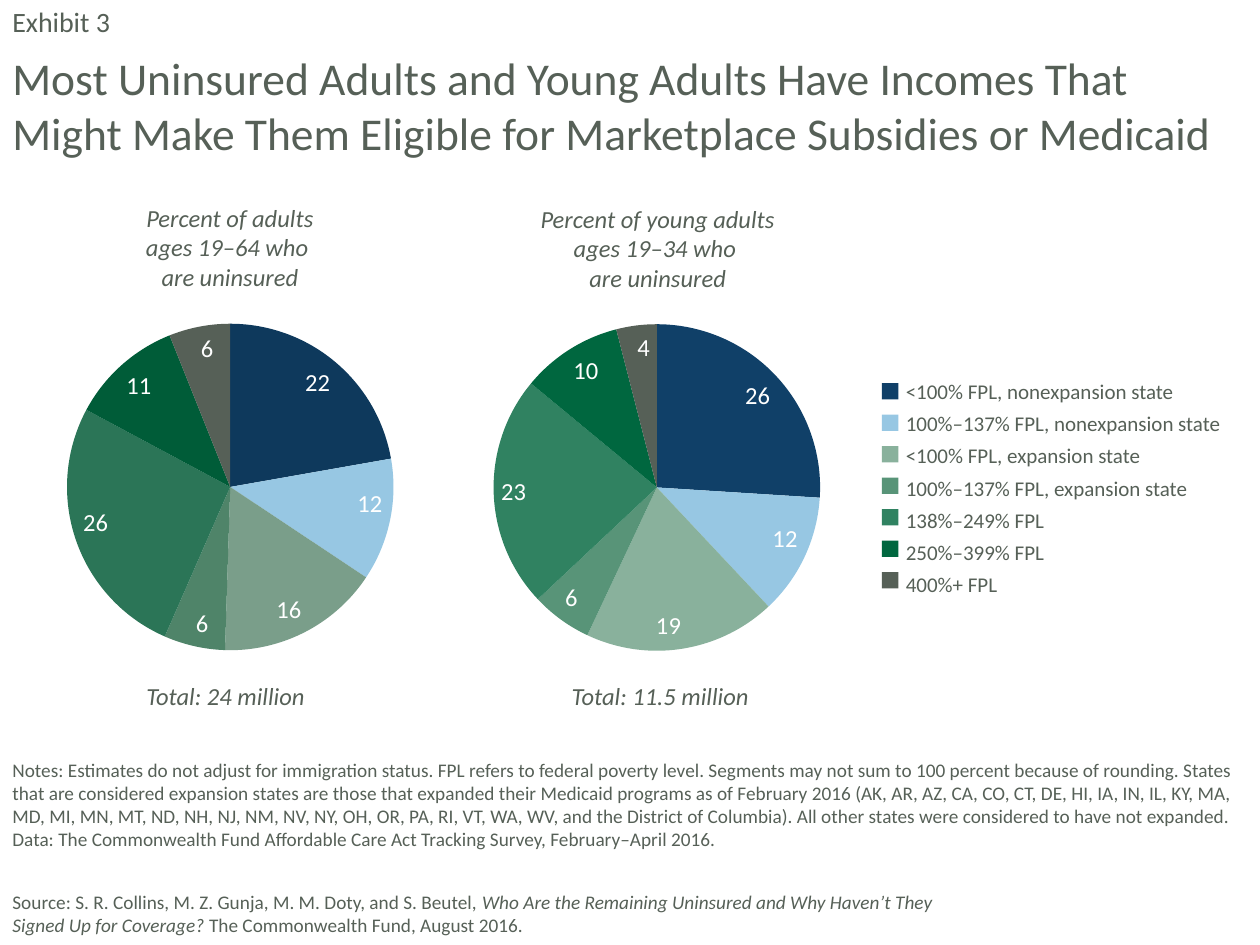
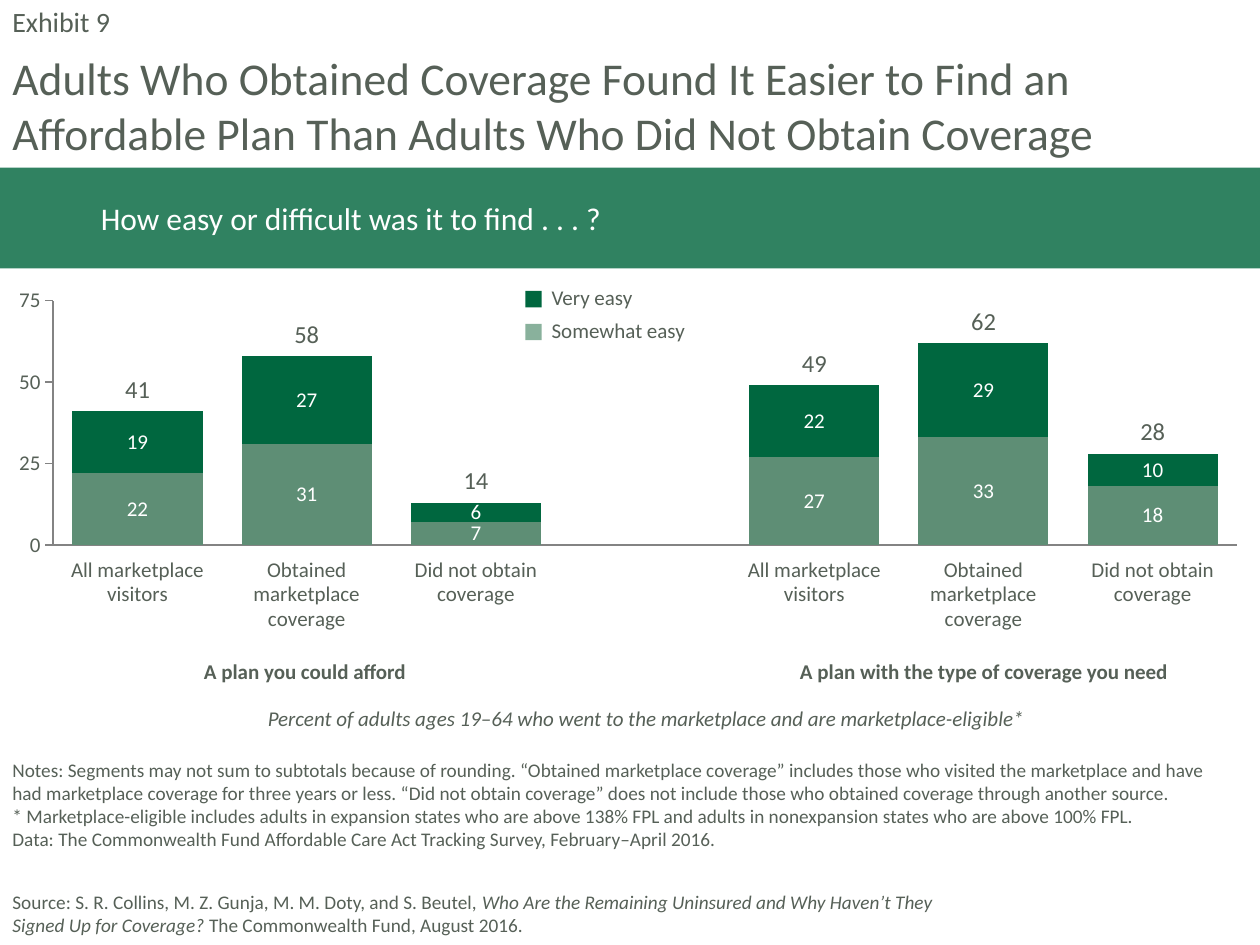
import pptx
import pptx.util
import pptx.chart.data
import pptx.dml.color
import pptx.enum.chart
import pptx.enum.shapes
import pptx.enum.text
import pptx.oxml
from lxml import etree

Inches = pptx.util.Inches
Pt = pptx.util.Pt
XL = pptx.enum.chart
ALIGN = pptx.enum.text.PP_ALIGN
ANCHOR = pptx.enum.text.MSO_ANCHOR

FONT = "Calibri"
COLORS = {
    "text": "566057", "white": "FFFFFF", "axis": "838383",
    "navy": "104068", "sky": "97C7E3", "sage": "89B19C", "fern": "589478",
    "green": "308261", "forest": "00673F", "moss": "5E8E75",
    "deep_navy": "0E395C", "deep_sage": "7A9E8A", "deep_fern": "4F8469",
    "deep_green": "2B7557", "deep_forest": "005C38",
}
INCOME_GROUPS = [
    ("<100% FPL, nonexpansion state", "navy"),
    ("100%–137% FPL, nonexpansion state", "sky"),
    ("<100% FPL, expansion state", "sage"),
    ("100%–137% FPL, expansion state", "fern"),
    ("138%–249% FPL", "green"),
    ("250%–399% FPL", "forest"),
    ("400%+ FPL", "text"),
]
ADULT_COLORS = ["deep_navy", "sky", "deep_sage", "deep_fern", "deep_green",
                "deep_forest", "text"]
YOUNG_COLORS = [color for _, color in INCOME_GROUPS]
SOURCE = [
    ("Source: S. R. Collins, M. Z. Gunja, M. M. Doty, and S. Beutel, ", False),
    ("Who Are the Remaining Uninsured and Why Haven’t They Signed Up for Coverage?", True),
    (" The Commonwealth Fund, August 2016.", False),
]
DATA = "Data: The Commonwealth Fund Affordable Care Act Tracking Survey, February–April 2016."
VISITORS = ["All marketplace visitors", "Obtained marketplace coverage",
            "Did not obtain coverage"]


def rgb(name):
    return pptx.dml.color.RGBColor.from_string(COLORS[name])


def set_font(font, size, color="text", bold=False, italic=False):
    font.name = FONT
    font.size = Pt(size)
    font.bold = bold
    font.italic = italic
    font.color.rgb = rgb(color)


def write(tf, text, size=12, color="text", bold=False, italic=False,
          align=ALIGN.LEFT, anchor=ANCHOR.TOP, spacing=None):
    tf.word_wrap = True
    tf.vertical_anchor = anchor
    paragraphs = text if isinstance(text, list) else [text]
    for i, content in enumerate(paragraphs):
        p = tf.paragraphs[0] if i == 0 else tf.add_paragraph()
        p.alignment = align
        if spacing:
            p.line_spacing = Pt(spacing)
        runs = content if isinstance(content, list) else [(content, italic)]
        for run_text, run_italic in runs:
            for j, line in enumerate(run_text.split("\n")):
                if j:
                    p.add_line_break()
                r = p.add_run()
                r.text = line
                set_font(r.font, size, color, bold, run_italic)


def add_text(s, x, y, w, h, text, **fmt):
    tf = s.shapes.add_textbox(Inches(x), Inches(y), Inches(w), Inches(h)).text_frame
    write(tf, text, **fmt)
    return tf


def add_rect(s, x, y, w, h, color):
    sp = s.shapes.add_shape(pptx.enum.shapes.MSO_SHAPE.RECTANGLE,
                            Inches(x), Inches(y), Inches(w), Inches(h))
    sp.shadow.inherit = False
    sp.fill.solid()
    sp.fill.fore_color.rgb = rgb(color)
    sp.line.fill.background()
    return sp


def add_swatch(s, x, y, color):
    add_rect(s, x, y, 0.13, 0.13, color)


def add_frame(prs, exhibit, title, notes):
    s = prs.slides.add_slide(prs.slide_layouts[6])
    tf = add_text(s, 0, 0.04, 10, 0.33, exhibit, size=16)
    tf.margin_top = tf.margin_bottom = 0
    add_text(s, 0, 0.35, 10, 0.98, title, size=26)
    add_text(s, 0, 5.96, 10, 0.84, [notes, DATA], size=11, anchor=ANCHOR.BOTTOM)
    add_text(s, 0, 7.01, 7.61, 0.47, [SOURCE], size=11, anchor=ANCHOR.BOTTOM)
    return s


def set_plot_layout(chart, x, y, w, h):
    plot_area = chart.plots[0]._element.getparent()
    for old in plot_area.findall(pptx.oxml.ns.qn("c:layout")):
        plot_area.remove(old)
    layout = etree.Element(pptx.oxml.ns.qn("c:layout"))
    manual = etree.SubElement(layout, pptx.oxml.ns.qn("c:manualLayout"))
    for tag, val in [("layoutTarget", "inner"), ("xMode", "edge"), ("yMode", "edge"),
                     ("x", x), ("y", y), ("w", w), ("h", h)]:
        etree.SubElement(manual, pptx.oxml.ns.qn("c:" + tag)).set("val", str(val))
    plot_area.insert(0, layout)


def add_chart(s, kind, box, layout, categories, series):
    data = pptx.chart.data.CategoryChartData(number_format="0")
    data.categories = categories
    for name, values in series:
        data.add_series(name, values)
    chart = s.shapes.add_chart(kind, *map(Inches, box), data).chart
    chart.has_title = False
    chart.has_legend = False
    set_font(chart.font, 12)
    set_plot_layout(chart, *layout)
    return chart


def label_values(labels, size, position):
    labels.show_value = True
    labels.number_format = "0"
    labels.number_format_is_linked = False
    labels.position = position
    set_font(labels.font, size, "white")


def add_pie(s, box, layout, name, values, colors):
    chart = add_chart(s, XL.XL_CHART_TYPE.PIE, box, layout,
                      [group for group, _ in INCOME_GROUPS], [(name, values)])
    plot = chart.plots[0]
    plot.has_data_labels = True
    label_values(plot.data_labels, 14, XL.XL_LABEL_POSITION.INSIDE_END)
    for i, color in enumerate(colors):
        fmt = plot.series[0].points[i].format
        fmt.fill.solid()
        fmt.fill.fore_color.rgb = rgb(color)
        fmt.line.fill.background()


def add_stacked_columns(s, box, layout, categories, series, colors):
    chart = add_chart(s, XL.XL_CHART_TYPE.COLUMN_STACKED, box, layout,
                      categories, series)
    plot = chart.plots[0]
    plot.gap_width = 30
    plot.overlap = 100
    plot.vary_by_categories = False
    for ser, color in zip(plot.series, colors):
        ser.format.fill.solid()
        ser.format.fill.fore_color.rgb = rgb(color)
        ser.format.line.fill.background()
        label_values(ser.data_labels, 12, XL.XL_LABEL_POSITION.CENTER)
    value_axis, category_axis = chart.value_axis, chart.category_axis
    value_axis.minimum_scale = 0
    value_axis.maximum_scale = 75
    value_axis.major_unit = 25
    value_axis.has_major_gridlines = False
    value_axis.major_tick_mark = XL.XL_TICK_MARK.OUTSIDE
    category_axis.major_tick_mark = XL.XL_TICK_MARK.NONE
    category_axis.tick_label_position = XL.XL_TICK_LABEL_POSITION.LOW
    for axis in (value_axis, category_axis):
        axis.minor_tick_mark = XL.XL_TICK_MARK.NONE
        axis.format.line.color.rgb = rgb("axis")
        axis.format.line.width = Pt(1)
        set_font(axis.tick_labels.font, 12)


def build_income_slide(prs):
    s = add_frame(
        prs, "Exhibit 3",
        "Most Uninsured Adults and Young Adults Have Incomes That Might Make Them "
        "Eligible for Marketplace Subsidies or Medicaid",
        "Notes: Estimates do not adjust for immigration status. FPL refers to federal "
        "poverty level. Segments may not sum to 100 percent because of rounding. States "
        "that are considered expansion states are those that expanded their Medicaid "
        "programs as of February 2016 (AK, AR, AZ, CA, CO, CT, DE, HI, IA, IN, IL, KY, MA, "
        "MD, MI, MN, MT, ND, NH, NJ, NM, NV, NY, OH, OR, PA, RI, VT, WA, WV, and the "
        "District of Columbia). All other states were considered to have not expanded.")
    add_pie(s, (0, 2.42, 3.19, 2.82), (0.146, 0.053, 0.854, 0.919),
            "Adults 19–64", [22, 12, 16, 6, 26, 11, 6], ADULT_COLORS)
    add_pie(s, (3.81, 2.31, 2.81, 3), (0.026, 0.088, 0.947, 0.864),
            "Young adults 19–34", [26, 12, 19, 6, 23, 10, 4], YOUNG_COLORS)
    caption = dict(size=14, italic=True, align=ALIGN.CENTER)
    add_text(s, 0.92, 1.56, 1.81, 0.81,
             "Percent of adults ages 19–64 who \nare uninsured", **caption)
    add_text(s, 4.11, 1.57, 2.22, 0.81,
             "Percent of young adults ages 19–34 who \nare uninsured", **caption)
    add_text(s, 0.92, 5.36, 1.74, 0.34, "Total: 24 million", **caption)
    add_text(s, 4.37, 5.36, 1.74, 0.34, "Total: 11.5 million", **caption)
    add_text(s, 7.09, 2.9, 2.71, 1.87, [group for group, _ in INCOME_GROUPS],
             spacing=18.4)
    for i, (_, color) in enumerate(INCOME_GROUPS):
        add_swatch(s, 7, 3.04 + 0.25 * i, color)


def build_affordability_slide(prs):
    s = add_frame(
        prs, "Exhibit 9",
        "Adults Who Obtained Coverage Found It Easier to Find an Affordable Plan Than "
        "Adults Who Did Not Obtain Coverage",
        "Notes: Segments may not sum to subtotals because of rounding. “Obtained "
        "marketplace coverage” includes those who visited the marketplace and have \n"
        "had marketplace coverage for three years or less. “Did not obtain coverage” does "
        "not include those who obtained coverage through another source. \n"
        "* Marketplace-eligible includes adults in expansion states who are above 138% FPL "
        "and adults in nonexpansion states who are above 100% FPL.")
    somewhat = [22, 31, 7, None, 27, 33, 18]
    very = [19, 27, 6, None, 22, 29, 10]
    totals = [41, 58, 14, None, 49, 62, 28]
    add_stacked_columns(s, (0, 2.08, 10, 3.06), (0.042, 0.1, 0.94, 0.634),
                        VISITORS + [""] + VISITORS,
                        [("Somewhat easy", somewhat), ("Very easy", very)],
                        ["moss", "forest"])
    column_w, base_y, unit = 9.4 / 7, 4.33, 1.94 / 75
    for i, total in enumerate(totals):
        if total is not None:
            bar_top = base_y - unit * (somewhat[i] + very[i])
            add_text(s, 0.42 + column_w * i, bar_top - 0.35, column_w, 0.34,
                     str(total), size=14, align=ALIGN.CENTER)

    band = add_rect(s, 0, 1.33, 10, 0.8, "green")
    band.text_frame.margin_left = Inches(0.8)
    write(band.text_frame, "How easy or difficult was it to find . . . ?", size=18,
          color="white", anchor=ANCHOR.MIDDLE)
    for i, (name, color) in enumerate([("Very easy", "forest"), ("Somewhat easy", "sage")]):
        add_text(s, 4.28, 2.21 + 0.26 * i, 1.4, 0.3, name)
        add_swatch(s, 4.17, 2.31 + 0.26 * i, color)

    add_text(s, 0.97, 5.18, 2.9, 0.3, "A plan you could afford",
             bold=True, align=ALIGN.CENTER)
    add_text(s, 5.83, 5.18, 3.96, 0.3, "A plan with the type of coverage you need",
             bold=True, align=ALIGN.CENTER)
    add_text(s, 0.91, 5.55, 8.44, 0.3,
             "Percent of adults ages 19–64 who went to the marketplace and are "
             "marketplace-eligible*", italic=True, align=ALIGN.CENTER)


def main():
    prs = pptx.Presentation()
    prs.slide_width = Inches(10)
    prs.slide_height = Inches(7.5)
    build_income_slide(prs)
    build_affordability_slide(prs)
    prs.save("out.pptx")


if __name__ == "__main__":
    main()
